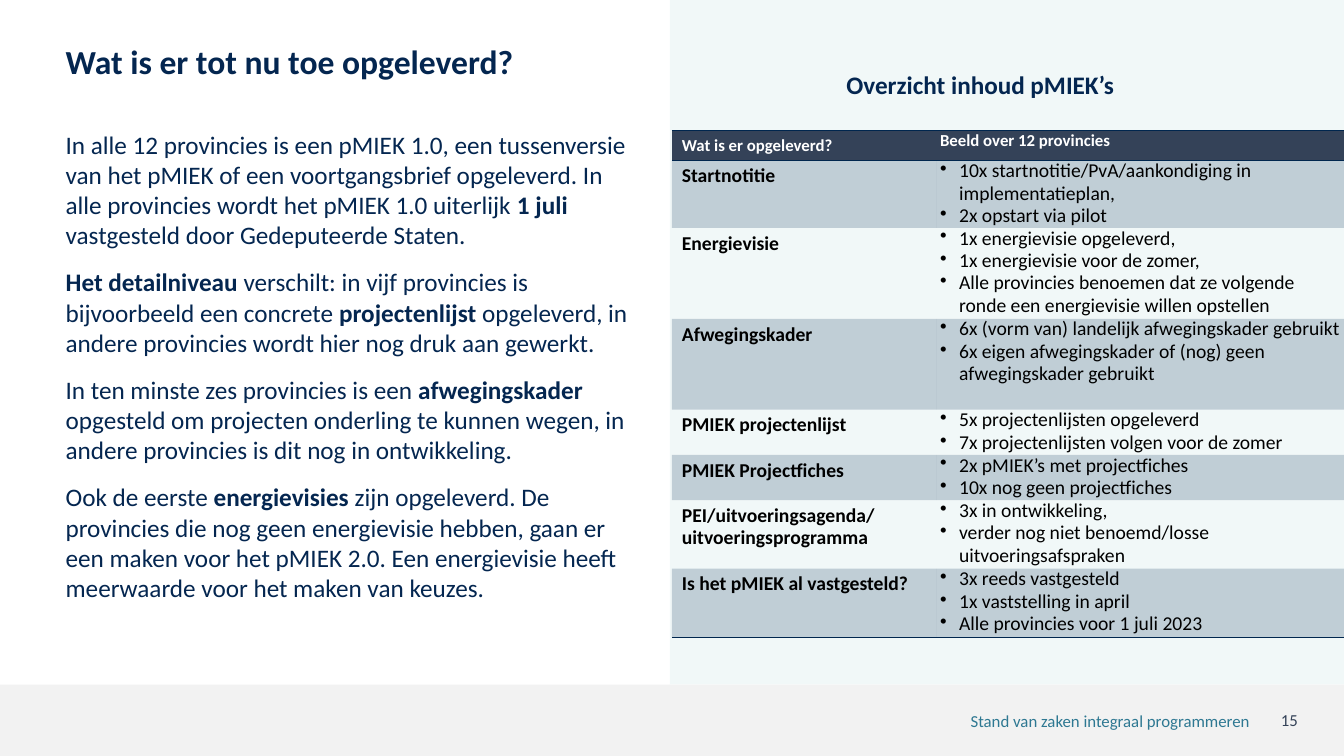
from dataclasses import dataclass

from lxml import etree
from pptx import Presentation
from pptx.dml.color import RGBColor
from pptx.enum.shapes import MSO_SHAPE
from pptx.enum.text import MSO_ANCHOR, MSO_AUTO_SIZE, PP_ALIGN
from pptx.oxml.ns import qn
from pptx.util import Cm, Pt

RECTANGLE = MSO_SHAPE.RECTANGLE
TOP = MSO_ANCHOR.TOP
NO_AUTOFIT = MSO_AUTO_SIZE.NONE
LEFT, RIGHT = PP_ALIGN.LEFT, PP_ALIGN.RIGHT
NO_GRID_STYLE = "{2D5ABB26-0587-4C30-8999-92F81FD0307C}"


@dataclass(frozen=True)
class Theme:
    font: str = "Calibri"
    navy: str = "042650"
    slate: str = "344258"
    teal: str = "2E7892"
    white: str = "FFFFFF"
    black: str = "000000"
    rule: str = "00264E"
    mint: str = "C8E5E6"
    grey: str = "F2F2F2"
    title_size: int = 24
    body_size: int = 18
    cell_size: int = 14
    small_size: int = 12
    cell_line: int = 16


THEME = Theme()

TITLE = "Wat is er tot nu toe opgeleverd?"
# Text between double asterisks is bold.
BODY = [
    "In alle 12 provincies is een pMIEK 1.0, een tussenversie van het pMIEK of een "
    "voortgangsbrief opgeleverd. In alle provincies wordt het pMIEK 1.0 uiterlijk "
    "**1 juli **vastgesteld door Gedeputeerde Staten.",
    "**Het detailniveau **verschilt: in vijf provincies is bijvoorbeeld een concrete "
    "**projectenlijst** opgeleverd, in andere provincies wordt hier nog druk aan gewerkt.",
    "In ten minste zes provincies is een **afwegingskader **opgesteld om projecten "
    "onderling te kunnen wegen, in andere provincies is dit nog in ontwikkeling.",
    "Ook de eerste **energievisies **zijn opgeleverd. De provincies die nog geen "
    "energievisie hebben, gaan er een maken voor het pMIEK 2.0. Een energievisie heeft "
    "meerwaarde voor het maken van keuzes.",
]
HEADER = ("Wat is er opgeleverd?", "Beeld over 12 provincies")
COLUMN_WIDTHS = (6.68, 10.26)
HEADER_HEIGHT = 0.77
# Label, row height in centimetres, findings
ROWS = [
    ("Startnotitie", 1.69,
     ["10x startnotitie/PvA/aankondiging in implementatieplan,", "2x opstart via pilot"]),
    ("Energievisie", 2.29,
     ["1x energievisie opgeleverd,", "1x energievisie voor de zomer,",
      "Alle provincies benoemen dat ze volgende ronde een energievisie willen opstellen"]),
    ("Afwegingskader", 2.29,
     ["6x (vorm van) landelijk afwegingskader gebruikt",
      "6x eigen afwegingskader of (nog) geen afwegingskader gebruikt"]),
    ("PMIEK projectenlijst", 1.14,
     ["5x projectenlijsten opgeleverd", "7x projectenlijsten volgen voor de zomer"]),
    ("PMIEK Projectfiches", 1.14,
     ["2x pMIEK’s met projectfiches", "10x nog geen projectfiches"]),
    ("PEI/uitvoeringsagenda/ uitvoeringsprogramma", 1.73,
     ["3x in ontwikkeling,", "verder nog niet benoemd/losse uitvoeringsafspraken"]),
    ("Is het pMIEK al vastgesteld?", 1.73,
     ["3x reeds vastgesteld", "1x vaststelling in april",
      "Alle provincies voor 1 juli 2023"]),
]


def set_font(paragraph, size, colour, bold=None):
    font = paragraph.font
    font.name, font.size, font.bold = THEME.font, Pt(size), bold
    font.color.rgb = RGBColor.from_string(colour)


def set_fill(fill, element, colour, opacity=100):
    """Fill solidly; element is the XML parent of the fill."""
    fill.solid()
    fill.fore_color.rgb = RGBColor.from_string(colour)
    if opacity < 100:
        tint = element.find(qn("a:solidFill")).find(qn("a:srgbClr"))
        etree.SubElement(tint, qn("a:alpha"), val=str(opacity * 1000))


def place(shape, left, top, width, height):
    shape.left, shape.top = Cm(left), Cm(top)
    shape.width, shape.height = Cm(width), Cm(height)


def set_bullet(paragraph, symbol=None, indent=0):
    """Give the paragraph a bullet with a hanging indent, or remove its bullet."""
    properties = paragraph._p.get_or_add_pPr()
    properties.set("marL", str(Cm(indent)))
    properties.set("indent", str(-Cm(indent)))
    if symbol:
        etree.SubElement(properties, qn("a:buChar"), char=symbol)
    else:
        etree.SubElement(properties, qn("a:buNone"))


def add_panel(page, left, top, width, height, colour, opacity=100):
    panel = page.shapes.add_shape(RECTANGLE, Cm(left), Cm(top), Cm(width), Cm(height))
    panel.shadow.inherit = False
    panel.line.fill.background()
    set_fill(panel.fill, panel.element.spPr, colour, opacity)


def add_label(page, text, left, top, width, height, size, colour, bold=None, align=LEFT):
    box = page.shapes.add_textbox(Cm(left), Cm(top), Cm(width), Cm(height))
    box.text_frame.word_wrap = True
    para = box.text_frame.paragraphs[0]
    para.text, para.alignment = text, align
    set_font(para, size, colour, bold)


def fill_title(title):
    place(title, 1.4, 0.91, 30.51, 2.26)
    frame = title.text_frame
    frame.vertical_anchor, frame.auto_size = TOP, NO_AUTOFIT
    para = frame.paragraphs[0]
    para.text, para.alignment = TITLE, LEFT
    set_font(para, THEME.title_size, THEME.navy, True)


def fill_body(body):
    place(body, 1.4, 3.12, 14.81, 12.32)
    frame = body.text_frame
    frame.vertical_anchor, frame.auto_size = TOP, NO_AUTOFIT
    for index, text in enumerate(BODY):
        para = frame.add_paragraph() if index else frame.paragraphs[0]
        set_bullet(para)
        para.space_before, para.space_after = Pt(0), Pt(12)
        set_font(para, THEME.body_size, THEME.navy)
        for number, part in enumerate(text.split("**")):
            if part:
                span = para.add_run()
                span.text, span.font.bold = part, number % 2 == 1


def add_rules(cell, *sides):
    """Draw lines on the named sides (T before B) of a cell that has its fill."""
    properties = cell._tc.get_or_add_tcPr()
    for position, side in enumerate(sides):
        line = etree.Element(qn(f"a:ln{side}"), w=str(Pt(1)))
        solid = etree.SubElement(line, qn("a:solidFill"))
        etree.SubElement(solid, qn("a:srgbClr"), val=THEME.rule)
        properties.insert(position, line)


def write_cell(cell, texts, size, colour, bold, bulleted=False, line=None):
    for index, text in enumerate(texts):
        para = cell.text_frame.add_paragraph() if index else cell.text_frame.paragraphs[0]
        para.text = text
        if line:
            para.line_spacing = Pt(line)
        if bulleted:
            set_bullet(para, "•", 0.48)
        set_font(para, size, colour, bold)


def add_overview_table(page):
    heights = [HEADER_HEIGHT] + [height for _, height, _ in ROWS]
    frame = page.shapes.add_table(len(heights), 2, Cm(16.93), Cm(3.28),
                                  Cm(sum(COLUMN_WIDTHS)), Cm(sum(heights)))
    table = frame.table
    table.horz_banding = False
    for style in frame.element.iter(qn("a:tableStyleId")):
        style.text = NO_GRID_STYLE
    for column, width in zip(table.columns, COLUMN_WIDTHS):
        column.width = Cm(width)
    for row, height in zip(table.rows, heights):
        row.height = Cm(height)
        finding = row.cells[1]
        finding.margin_left = finding.margin_right = Cm(0.08)
        finding.margin_top = finding.margin_bottom = 0

    for cell, text in zip(table.rows[0].cells, HEADER):
        write_cell(cell, [text], THEME.small_size, THEME.white, True)
        set_fill(cell.fill, cell._tc.get_or_add_tcPr(), THEME.slate)
        add_rules(cell, "T", "B")
    for number, (label, _, findings) in enumerate(ROWS, start=1):
        cells = table.cell(number, 0), table.cell(number, 1)
        write_cell(cells[0], [label], THEME.cell_size, THEME.black, True,
                   line=THEME.cell_line)
        write_cell(cells[1], findings, THEME.cell_size, THEME.black, False,
                   bulleted=True, line=THEME.cell_line)
        for cell in cells:
            if number % 2:
                set_fill(cell.fill, cell._tc.get_or_add_tcPr(), THEME.rule, 20)
            else:
                cell.fill.background()
            if number == len(ROWS):
                add_rules(cell, "B")


def main():
    deck = Presentation()
    deck.slide_width, deck.slide_height = Cm(33.87), Cm(19.05)
    page = deck.slides.add_slide(deck.slide_layouts[1])
    add_panel(page, 16.88, 0, 16.99, 17.25, THEME.mint, 25)
    add_panel(page, 0, 17.25, 33.87, 1.8, THEME.grey)
    fill_title(page.shapes.title)
    fill_body(page.placeholders[1])
    add_label(page, "Overzicht inhoud pMIEK’s", 21.08, 1.63, 8.51, 1.02,
              THEME.body_size, THEME.navy, True)
    add_label(page, "15", 32.03, 17.75, 1.14, 0.74, THEME.small_size, THEME.slate)
    add_label(page, "Stand van zaken integraal programmeren", 20.32, 17.78, 11.43, 0.74,
              THEME.small_size, THEME.teal, align=RIGHT)
    add_overview_table(page)
    deck.save("out.pptx")


if __name__ == "__main__":
    main()
